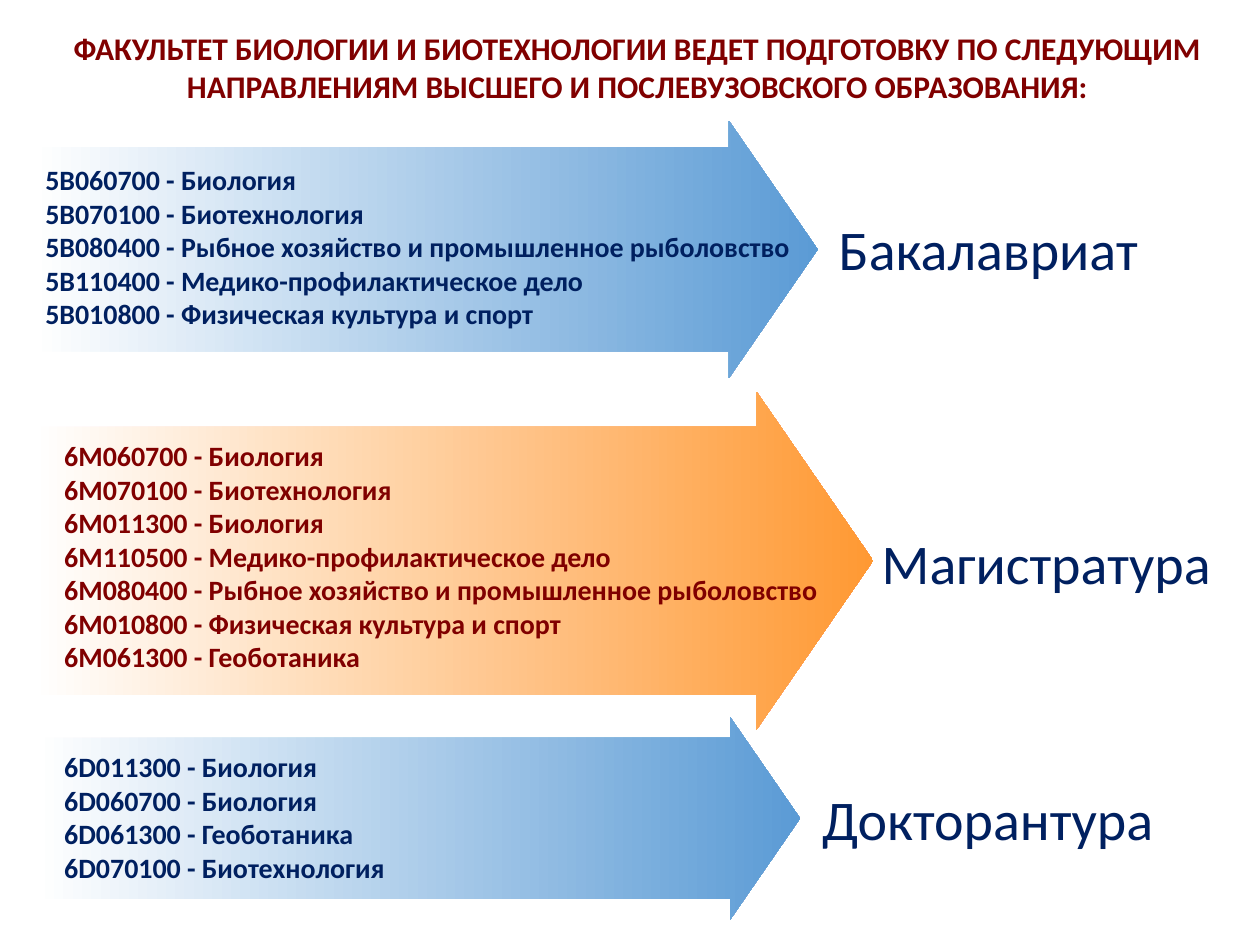
from lxml.etree import SubElement
from pptx import Presentation
from pptx.dml.color import RGBColor as Rgb
from pptx.enum.shapes import MSO_SHAPE as Shape
from pptx.enum.text import MSO_ANCHOR as Anchor, MSO_AUTO_SIZE as AutoSize, PP_ALIGN as Align
from pptx.oxml.ns import qn
from pptx.util import Emu, Pt

PX = 9144
COMPARISON_LAYOUT = 4
COLORS = {"white": "FFFFFF", "blue": "5B9BD5", "orange": "FF9933",
          "navy": "002060", "maroon": "800000"}
TITLE = ("ФАКУЛЬТЕТ БИОЛОГИИ И БИОТЕХНОЛОГИИ ВЕДЕТ ПОДГОТОВКУ ПО СЛЕДУЮЩИМ "
         "НАПРАВЛЕНИЯМ ВЫСШЕГО И ПОСЛЕВУЗОВСКОГО ОБРАЗОВАНИЯ:")
LEVELS = [
    {"name": "Бакалавриат", "fill": "blue", "ink": "navy",
     "arrow": (26, 96, 623, 204), "label": (621, 30, 275, 142), "list": (0, 28, 682, 145),
     "programs": ["5В060700 - Биология",
                  "5В070100 - Биотехнология",
                  "5В080400 - Рыбное хозяйство и промышленное рыболовство",
                  "5В110400 - Медико-профилактическое дело",
                  "5В010800 - Физическая культура и спорт"]},
    {"name": "Магистратура", "fill": "orange", "ink": "maroon",
     "arrow": (26, 311, 667, 268), "label": (651, 64, 307, 142), "list": (15, 32, 652, 199),
     "programs": ["6М060700 - Биология",
                  "6М070100 - Биотехнология",
                  "6М011300 - Биология",
                  "6М110500 - Медико-профилактическое дело",
                  "6М080400 - Рыбное хозяйство и промышленное рыболовство",
                  "6М010800 - Физическая культура и спорт",
                  "6М061300 - Геоботаника"]},
    {"name": "Докторантура", "fill": "blue", "ink": "navy",
     "arrow": (28, 569, 607, 161), "label": (607, 40, 298, 80), "list": (13, 21, 500, 118),
     "programs": ["6D011300 - Биология",
                  "6D060700 - Биология",
                  "6D061300 - Геоботаника",
                  "6D070100 - Биотехнология"]},
]


def color(name):
    """Return the named colour."""
    return Rgb.from_string(COLORS[name])


def place(shape, box):
    """Move and size a shape to a box in px."""
    shape.left, shape.top, shape.width, shape.height = (Emu(side * PX) for side in box)


def write(shape, text, size, ink, bold=False, align=Align.LEFT, anchor=Anchor.TOP):
    """Fill a shape with unbulleted text in one style."""
    frame = shape.text_frame
    frame.text = text
    frame.word_wrap = True
    frame.auto_size = AutoSize.NONE
    frame.vertical_anchor = anchor
    for para in frame.paragraphs:
        para.alignment = align
        para.space_before = Pt(0)
        properties = para._p.get_or_add_pPr()
        properties.set("marL", "0")
        properties.set("indent", "0")
        SubElement(properties, qn("a:buNone"))
        for span in para.runs:
            font = span.font
            font.name, font.size, font.bold = "Calibri", Pt(size), bold
            font.color.rgb = color(ink)


def add_plain_shape(page, kind, box, adjustments):
    """Add a preset shape without line or shadow."""
    shape = page.shapes.add_shape(kind, *(Emu(side * PX) for side in box))
    shape.shadow.inherit = False
    shape.line.fill.background()
    for index, value in enumerate(adjustments):
        shape.adjustments[index] = value
    return shape


def add_level(page, body, level):
    """Build one degree level: arrow, label and list of programs."""
    left, top = level["arrow"][:2]

    def inside(box):
        """Shift a box from the arrow's corner to the page."""
        return (left + box[0], top + box[1], *box[2:])

    arrow = add_plain_shape(page, Shape.RIGHT_ARROW, level["arrow"], (0.793, 0.345))
    arrow.fill.gradient()
    arrow.fill.gradient_angle = 0
    for stop, name in zip(arrow.fill.gradient_stops, ("white", level["fill"])):
        stop.color.rgb = color(name)

    label = add_plain_shape(page, Shape.ROUNDED_RECTANGLE, inside(level["label"]), (0.091,))
    label.fill.background()
    write(label, level["name"], 32, "navy", align=Align.CENTER, anchor=Anchor.MIDDLE)

    place(body, inside(level["list"]))
    write(body, "\n".join(level["programs"]), 16, level["ink"], bold=True)
    arrow.element.getparent().append(body.element)


def main():
    """Build and save the deck."""
    deck = Presentation()
    deck.slide_width, deck.slide_height = Emu(1000 * PX), Emu(750 * PX)
    page = deck.slides.add_slide(deck.slide_layouts[COMPARISON_LAYOUT])
    title, *bodies = page.placeholders
    place(title, (41, 18, 930, 71))
    write(title, TITLE, 18, "maroon", bold=True, align=Align.CENTER)
    for body, level in zip(bodies, LEVELS):
        add_level(page, body, level)
    for spare in bodies[len(LEVELS):]:
        spare.element.getparent().remove(spare.element)
    deck.save("out.pptx")


if __name__ == "__main__":
    main()
